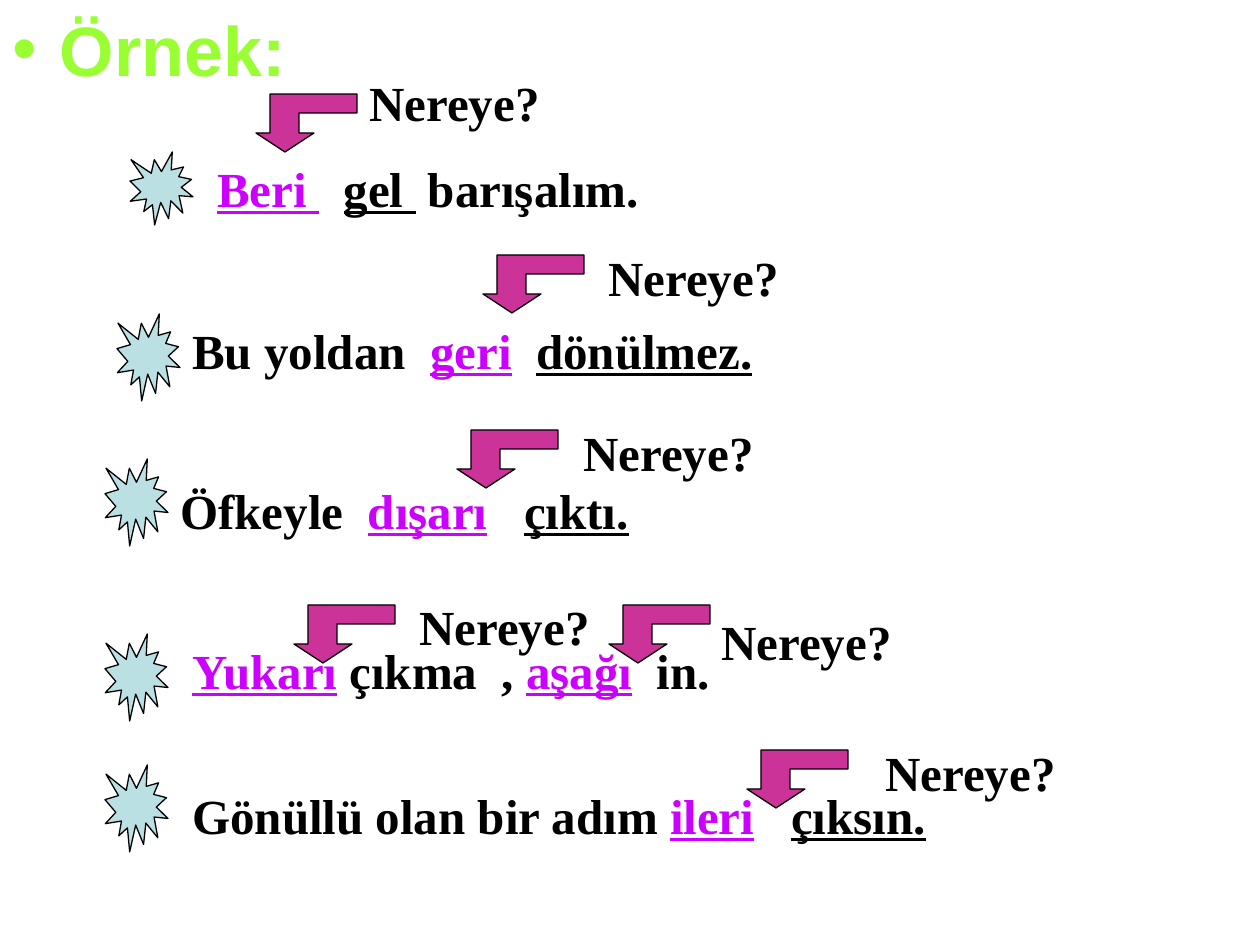
from dataclasses import dataclass

from lxml import etree
from pptx import Presentation
from pptx.dml.color import RGBColor
from pptx.enum.shapes import MSO_SHAPE
from pptx.enum.text import MSO_ANCHOR, MSO_AUTO_SIZE
from pptx.util import Inches, Pt

STAR = MSO_SHAPE.EXPLOSION1
TOP = MSO_ANCHOR.TOP
GROW = MSO_AUTO_SIZE.SHAPE_TO_FIT_TEXT
FIXED = MSO_AUTO_SIZE.NONE
PX = Inches(1) / 126


@dataclass(frozen=True)
class Theme:
    heading_font: str = "Arial"
    body_font: str = "Times New Roman"
    heading_size: int = 40
    body_size: int = 28
    line_width: float = 0.75
    heading: str = "99FF33"
    ink: str = "000000"
    adverb: str = "CC00FF"
    star: str = "BBE0E3"
    arrow: str = "CC3399"


THEME = Theme()
QUESTION = "Nereye?"
QUESTION_WIDTH = 197
TEXT_HEIGHT = 72
STAR_WIDTH = 63
ARROW_OUTLINE = [(29, 58), (58, 39), (43, 39), (43, 19), (101, 19),
                 (101, 0), (14, 0), (14, 39), (0, 39)]

PLAIN = {"color": THEME.ink, "underline": False}
VERB = {"color": THEME.ink, "underline": True}
ADVERB = {"color": THEME.adverb, "underline": True}

EXAMPLES = [
    {"box": (205, 152, 491), "star": (-75, 0, 73),
     "words": [("Beri ", ADVERB), ("  ", PLAIN), ("gel ", VERB), (" barışalım.", PLAIN)],
     "cues": [((51, -58), (152, -86))]},
    {"box": (180, 314, 693), "star": (-63, 0, 87),
     "words": [("Bu yoldan  ", PLAIN), ("geri", ADVERB), ("  ", PLAIN), ("dönülmez.", VERB)],
     "cues": [((303, -59), (416, -73))]},
    {"box": (168, 474, 630), "star": (-63, -15, 87),
     "words": [("Öfkeyle  ", PLAIN), ("dışarı", ADVERB), ("   ", PLAIN), ("çıktı.", VERB)],
     "cues": [((289, -44), (403, -58))]},
    {"box": (180, 634, 630), "star": (-75, 0, 87),
     "words": [("Yukarı", ADVERB), (" çıkma  , ", PLAIN), ("aşağı", ADVERB), ("  in.", PLAIN)],
     "cues": [((114, -29), (227, -44)), ((429, -29), (529, -29))]},
    {"box": (180, 779, 1046), "star": (-75, -14, 87),
     "words": [("Gönüllü olan bir adım ", PLAIN), ("ileri", ADVERB), ("   ", PLAIN),
               ("çıksın.", VERB)],
     "cues": [((567, -29), (693, -43))]},
]


def px(*lengths):
    return [round(length * PX) for length in lengths]


def apply(target, values):
    for name, value in values.items():
        setattr(target, name, value)


def add_words(paragraph, words, font, size):
    for text, look in words:
        run = paragraph.add_run()
        run.text = text
        apply(run.font, {"name": font, "size": Pt(size), "bold": True,
                         "underline": look["underline"]})
        run.font.color.rgb = RGBColor.from_string(look["color"])


def paint(shape, fill):
    shape.shadow.inherit = False
    shape.fill.solid()
    shape.fill.fore_color.rgb = RGBColor.from_string(fill)
    shape.line.color.rgb = RGBColor.from_string(THEME.ink)
    shape.line.width = Pt(THEME.line_width)


def place_heading(slide, box):
    slide.shapes.title.element.getparent().remove(slide.shapes.title.element)
    heading = slide.placeholders[1]
    apply(heading, dict(zip(("left", "top", "width", "height"), px(*box))))
    apply(heading.text_frame, {"auto_size": FIXED, "vertical_anchor": TOP})
    look = {"color": THEME.heading, "underline": False}
    paragraph = heading.text_frame.paragraphs[0]
    add_words(paragraph, [("Örnek:", look)], THEME.heading_font, THEME.heading_size)
    properties = paragraph._p.get_or_add_pPr()
    namespace = properties.nsmap["a"]
    etree.SubElement(properties, f"{{{namespace}}}buChar", char="•")


def place_text(slide, box, words, wrap):
    text_frame = slide.shapes.add_textbox(*px(*box)).text_frame
    apply(text_frame, {"word_wrap": wrap, "auto_size": GROW})
    add_words(text_frame.paragraphs[0], words, THEME.body_font, THEME.body_size)


def place_arrow(slide, left, top):
    outline = [(left + x, top + y) for x, y in ARROW_OUTLINE]
    builder = slide.shapes.build_freeform(*outline[0], scale=PX)
    builder.add_line_segments(outline[1:], close=True)
    paint(builder.convert_to_shape(), THEME.arrow)


def place_example(slide, box, star, words, cues):
    left, top, width = box
    star_x, star_y, star_height = star
    seal = slide.shapes.add_shape(
        STAR, *px(left + star_x, top + star_y, STAR_WIDTH, star_height))
    paint(seal, THEME.star)
    place_text(slide, (left, top, width, TEXT_HEIGHT), words, True)
    for (arrow_x, arrow_y), (question_x, question_y) in cues:
        place_arrow(slide, left + arrow_x, top + arrow_y)
        question_box = (left + question_x, top + question_y, QUESTION_WIDTH, TEXT_HEIGHT)
        place_text(slide, question_box, [(QUESTION, PLAIN)], False)


def main():
    presentation = Presentation()
    apply(presentation, {"slide_width": Inches(10), "slide_height": Inches(7.5)})
    slide = presentation.slides.add_slide(presentation.slide_layouts[1])
    place_heading(slide, (0, 0, 1260, 945))
    for example in EXAMPLES:
        place_example(slide, **example)
    presentation.save("out.pptx")


if __name__ == "__main__":
    main()
